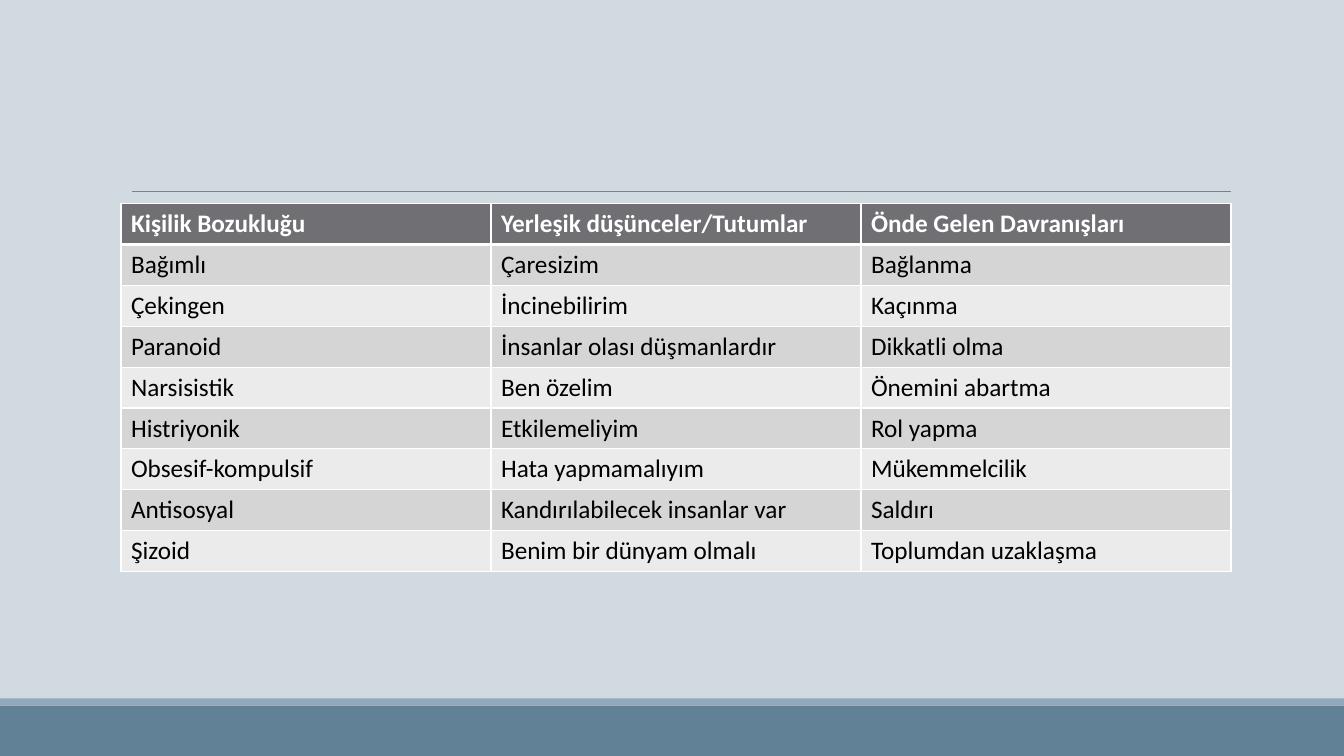
from lxml import etree
from pptx import Presentation
from pptx.dml.color import RGBColor
from pptx.enum.shapes import MSO_CONNECTOR, MSO_SHAPE
from pptx.oxml.ns import qn
from pptx.util import Pt

RECT = MSO_SHAPE.RECTANGLE
STRAIGHT = MSO_CONNECTOR.STRAIGHT
PX = 9144
WIDE, HIGH = 1333, 750
SKY = RGBColor(0xD1, 0xD9, 0xE1)
STEEL = RGBColor(0x61, 0x81, 0x97)
MIST = RGBColor(0x92, 0xA9, 0xB9)
GRAY = RGBColor(0x80, 0x80, 0x80)
SLATE = RGBColor(0x6F, 0x6F, 0x74)
DARK = RGBColor(0xD5, 0xD5, 0xD6)
LIGHT = RGBColor(0xEB, 0xEB, 0xEB)
WHITE = RGBColor(0xFF, 0xFF, 0xFF)
BLACK = RGBColor(0x00, 0x00, 0x00)

ROWS = [
    ("Kişilik Bozukluğu", "Yerleşik düşünceler/Tutumlar", "Önde Gelen Davranışları"),
    ("Bağımlı", "Çaresizim", "Bağlanma"),
    ("Çekingen", "İncinebilirim", "Kaçınma"),
    ("Paranoid", "İnsanlar olası düşmanlardır", "Dikkatli olma"),
    ("Narsisistik", "Ben özelim", "Önemini abartma"),
    ("Histriyonik", "Etkilemeliyim", "Rol yapma"),
    ("Obsesif-kompulsif", "Hata yapmamalıyım", "Mükemmelcilik"),
    ("Antisosyal", "Kandırılabilecek insanlar var", "Saldırı"),
    ("Şizoid", "Benim bir dünyam olmalı", "Toplumdan uzaklaşma"),
]


class Painter:
    """Draws elements on one slide in a shared style, measured in px."""

    def __init__(self, slide, font, size):
        self.slide = slide
        self.font = font
        self.size = size

    def back(self, color):
        fill = self.slide.background.fill
        fill.solid()
        fill.fore_color.rgb = color

    def band(self, top, height, color):
        shape = self.slide.shapes.add_shape(RECT, 0, top * PX, WIDE * PX, height * PX)
        shape.shadow.inherit = False
        shape.fill.solid()
        shape.fill.fore_color.rgb = color
        shape.line.fill.background()

    def rule(self, left, right, top, color, weight):
        line = self.slide.shapes.add_connector(
            STRAIGHT, left * PX, top * PX, right * PX, top * PX)
        line.line.color.rgb = color
        line.line.width = Pt(weight)
        etree.SubElement(line._element.spPr, qn("a:effectLst"))

    def edges(self, cell, color, **weights):
        props = cell._tc.get_or_add_tcPr()
        for place, (side, weight) in enumerate(weights.items()):
            edge = etree.Element(qn(f"a:ln{side}"), w=str(Pt(weight)))
            paint = etree.SubElement(edge, qn("a:solidFill"))
            etree.SubElement(paint, qn("a:srgbClr"), val=str(color))
            props.insert(place, edge)

    def cell(self, cell, text, fill, color, bold):
        cell.fill.solid()
        cell.fill.fore_color.rgb = fill
        run = cell.text_frame.paragraphs[0].add_run()
        run.text = text
        font = run.font
        font.name, font.size, font.bold = self.font, Pt(self.size), bold
        font.color.rgb = color

    def table(self, left, top, width, height, rows):
        count = len(rows[0])
        grid = self.slide.shapes.add_table(
            len(rows), count, left * PX, top * PX,
            width * count * PX, height * len(rows) * PX).table
        for y, row in enumerate(rows):
            head = y == 0
            fill = SLATE if head else DARK if y % 2 else LIGHT
            for x, text in enumerate(row):
                cell = grid.cell(y, x)
                self.cell(cell, text, fill, WHITE if head else BLACK, head)
                self.edges(cell, WHITE, L=1, R=1, T=3 if y == 1 else 1, B=3 if head else 1)


def main():
    deck = Presentation()
    deck.slide_width, deck.slide_height = WIDE * PX, HIGH * PX
    slide = deck.slides.add_slide(deck.slide_layouts[6])
    paint = Painter(slide, "Calibri", 18)
    paint.back(SKY)
    paint.band(700, 50, STEEL)
    paint.band(693, 7, MIST)
    paint.rule(131, 1221, 190, GRAY, 0.5)
    paint.table(120, 202, 367, 40, ROWS)
    deck.save("out.pptx")


if __name__ == "__main__":
    main()
